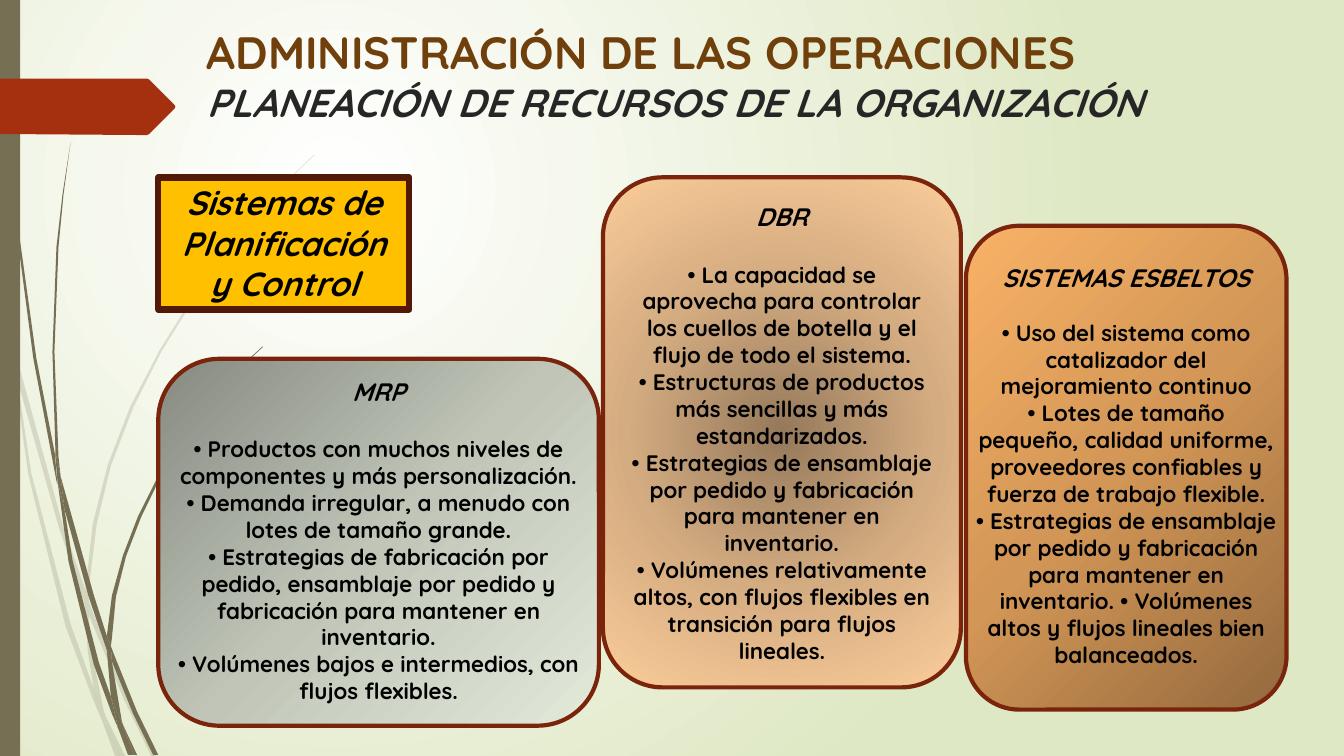
from dataclasses import dataclass
from typing import Optional

from lxml.etree import SubElement
from pptx import Presentation
from pptx.dml.color import RGBColor
from pptx.enum.shapes import MSO_SHAPE as Preset
from pptx.enum.text import MSO_ANCHOR as Anchor, MSO_AUTO_SIZE as AutoSize, PP_ALIGN as Align
from pptx.oxml.ns import qn
from pptx.util import Inches, Pt


@dataclass(frozen=True)
class Theme:
    font: str = "Quicksand"
    olive: str = "766F54"
    banner: str = "A53010"
    title: str = "6F3F0C"
    subtitle: str = "262626"
    text: str = "000000"
    topic_fill: str = "FFC000"
    topic_line: str = "521808"
    card_line: str = "7A240C"
    title_size: float = 32.4
    subtitle_size: float = 27.9
    topic_size: float = 24
    heading_size: float = 18
    body_size: float = 16


@dataclass(frozen=True)
class Box:
    left: float
    top: float
    width: float
    height: float

    def lengths(self) -> tuple:
        return tuple(Inches(v) for v in (self.left, self.top, self.width, self.height))


@dataclass(frozen=True)
class Gradient:
    stops: tuple
    angle: Optional[int] = None
    focus: tuple = (50, 50, 50, 50)


@dataclass(frozen=True)
class Card:
    box: Box
    gradient: Gradient
    heading: str
    bullets: tuple
    gap: float = 21
    text_box: Optional[Box] = None
    top_inset: float = 0.05


@dataclass(frozen=True)
class Grass:
    blades: tuple
    opacity: int


THEME = Theme()
BACKDROP = Gradient(((0, "FFFFFF"), (100, "DFE8C4")), focus=(50, 50, 100, 100))
BANNER = ((0, 0.78), (1.46, 0.78), (1.48, 0.79), (1.73, 1.04), (1.74, 1.06),
          (1.73, 1.08), (1.48, 1.33), (1.46, 1.34), (1.36, 1.34), (0, 1.33))

PALE_GRASS = Grass((
    ((0.11, 3.5), (0.09, 3.22), (0, 2.82), (0, 2.99), (0.1, 3.44)),
    ((0.58, 5.22), (0.84, 5.99), (0.85, 5.86), (0.62, 5.2), (0.14, 3.45), (0.17, 3.76)),
    ((0.92, 6.07), (0.88, 5.96), (0.88, 6.1), (1.23, 6.94), (1.5, 7.5), (1.55, 7.5), (1.27, 6.92)),
    ((1.19, 7.5), (1.24, 7.5), (1.05, 7.11)),
    ((0.93, 6.83), (0.7, 6.19), (0.31, 4.69), (0.17, 3.76), (0.11, 3.5), (0.28, 4.7),
     (0.65, 6.21), (0.92, 6.93), (1.01, 7.14), (0.99, 7.07)),
    ((0.84, 5.99), (0.87, 6.46), (0.93, 6.83), (0.96, 6.92), (1.05, 7.11), (1.03, 7.06),
     (0.91, 6.46), (0.88, 6.1), (0.88, 6.08)),
    ((0.88, 5.84), (0.96, 5.2), (1.1, 4.62), (1.32, 4.05), (1.6, 3.49), (1.93, 2.96),
     (2.29, 2.45), (2.68, 1.98), (2.9, 1.75), (3.12, 1.54), (3.12, 1.53), (2.89, 1.75),
     (2.68, 1.97), (2.28, 2.44), (1.91, 2.95), (1.58, 3.48), (1.29, 4.04), (1.07, 4.61),
     (0.92, 5.2), (0.85, 5.84), (0.85, 5.86), (0.88, 5.96)),
    ((1.01, 7.14), (1.14, 7.5), (1.19, 7.5)),
    ((0.88, 6.08), (0.88, 6.1), (0.88, 5.96), (0.85, 5.86), (0.84, 5.99)),
    ((0.96, 6.92), (0.93, 6.83), (0.99, 7.07), (1.01, 7.14), (1.19, 7.5), (1.05, 7.11)),
), 20)

DARK_GRASS = Grass((
    ((0.07, 1.1), (0.17, 2.33), (0.33, 3.55), (0.56, 4.77), (0.57, 4.81), (0.55, 4.57),
     (0.55, 4.53), (0.36, 3.55), (0.19, 2.32), (0.08, 1.09), (0.05, 0.48), (0.04, 0),
     (0.03, 0), (0.04, 0.48)),
    ((0.88, 5.92), (1.06, 6.45), (1.06, 6.31), (0.93, 5.9), (0.6, 4.72), (0.64, 5.05)),
    ((1.13, 6.49), (1.1, 6.41), (1.11, 6.56), (1.32, 7.08), (1.52, 7.49), (1.57, 7.49), (1.36, 7.06)),
    ((1.1, 6.91), (0.98, 6.57), (0.72, 5.56), (0.64, 5.05), (0.57, 4.77), (0.68, 5.57),
     (0.93, 6.59), (1.11, 7.08), (1.17, 7.22), (1.16, 7.17)),
    ((0.6, 4.72), (0.58, 4.53), (0.54, 3.49), (0.58, 2.45), (0.63, 1.93), (0.7, 1.41),
     (0.62, 1.93), (0.56, 2.45), (0.52, 3.49), (0.55, 4.49)),
    ((1.33, 7.49), (1.36, 7.49), (1.22, 7.19)),
    ((0.57, 4.77), (0.64, 5.05), (0.6, 4.72), (0.55, 4.49), (0.55, 4.53)),
    ((1.11, 6.33), (1.15, 5.92), (1.25, 5.52), (1.4, 5.13), (1.58, 4.76), (1.8, 4.4),
     (2.05, 4.06), (2.31, 3.74), (2.45, 3.59), (2.61, 3.44), (2.6, 3.44), (2.45, 3.58),
     (2.31, 3.73), (2.04, 4.05), (1.78, 4.39), (1.56, 4.74), (1.37, 5.12), (1.22, 5.51),
     (1.11, 5.91), (1.06, 6.31), (1.1, 6.41)),
    ((1.17, 7.22), (1.27, 7.49), (1.31, 7.49)),
    ((1.06, 6.45), (1.1, 6.91), (1.16, 7.06), (1.22, 7.19), (1.21, 7.16), (1.11, 6.56), (1.09, 6.51)),
    ((1.06, 6.45), (1.09, 6.51), (1.11, 6.56), (1.1, 6.41), (1.06, 6.31)),
    ((1.16, 7.06), (1.1, 6.91), (1.16, 7.17), (1.17, 7.22), (1.3, 7.49), (1.33, 7.49), (1.22, 7.19)),
), 100)

ASSEMBLY = "• Estrategias de ensamblaje por pedido y fabricación para mantener en inventario."
CARDS = (
    Card(Box(1.57, 3.56, 4.37, 3.64),
         Gradient(((0, "878A81"), (50, "C0C5B8"), (100, "E3EADA")), 45), "MRP",
         ("• Productos con muchos niveles de componentes y más personalización.",
          "• Demanda irregular, a menudo con lotes de tamaño grande.",
          "• Estrategias de fabricación por pedido, ensamblaje por pedido y fabricación "
          "para mantener en inventario.",
          "• Volúmenes bajos e intermedios, con flujos flexibles."),
         text_box=Box(1.57, 3.68, 4.37, 3.4)),
    Card(Box(5.98, 1.76, 3.55, 5.06),
         Gradient(((0, "95795B"), (50, "D4AC81"), (100, "FBCC99"))), "DBR",
         ("• La capacidad se aprovecha para controlar los cuellos de botella y el flujo "
          "de todo el sistema.",
          "• Estructuras de productos más sencillas y más estandarizados.",
          ASSEMBLY,
          "• Volúmenes relativamente altos, con flujos flexibles en transición para flujos lineales.")),
    Card(Box(9.58, 2.24, 3.18, 4.8),
         Gradient(((0, "94693D"), (50, "D29656"), (100, "F9B266")), 225), "SISTEMAS ESBELTOS",
         ("• Uso del sistema como catalizador del mejoramiento continuo",
          "• Lotes de tamaño pequeño, calidad uniforme, proveedores confiables y fuerza "
          "de trabajo flexible.",
          ASSEMBLY + " • Volúmenes altos y flujos lineales bien balanceados."),
         gap=19, text_box=Box(9.58, 2.3, 3.18, 4.7), top_inset=0.3),
)


def paint_gradient(fill, owner, gradient: Gradient) -> None:
    fill.gradient()
    node = next(owner.element.iter(qn("a:gradFill")))
    for child in list(node):
        node.remove(child)
    stops = SubElement(node, qn("a:gsLst"))
    for position, color in gradient.stops:
        stop = SubElement(stops, qn("a:gs"), pos=str(position * 1000))
        SubElement(stop, qn("a:srgbClr"), val=color)
    if gradient.angle is not None:
        SubElement(node, qn("a:lin"), ang=str(gradient.angle * 60000), scaled="0")
    else:
        circle = SubElement(node, qn("a:path"), path="circle")
        sides = {side: str(value * 1000) for side, value in zip("ltrb", gradient.focus)}
        SubElement(circle, qn("a:fillToRect"), **sides)


def paint_solid(shape, color: str, opacity: int = 100) -> None:
    shape.shadow.inherit = False
    shape.fill.solid()
    shape.fill.fore_color.rgb = RGBColor.from_string(color)
    shape.line.fill.background()
    if opacity < 100:
        node = next(shape.element.spPr.iter(qn("a:srgbClr")))
        SubElement(node, qn("a:alpha"), val=str(opacity * 1000))


def outline(shape, color: str, width: float) -> None:
    shape.shadow.inherit = False
    shape.line.color.rgb = RGBColor.from_string(color)
    shape.line.width = Pt(width)


def draw_outline(shapes, points: tuple, color: str, opacity: int = 100) -> None:
    corners = [(Inches(x), Inches(y)) for x, y in points]
    builder = shapes.build_freeform(*corners[0], scale=1.0)
    builder.add_line_segments(corners[1:], close=True)
    paint_solid(builder.convert_to_shape(), color, opacity)


def add_span(para, text: str, size: float, color: str = THEME.text, italic: bool = False) -> None:
    span = para.add_run()
    span.text = text
    span.font.name, span.font.size = THEME.font, Pt(size)
    span.font.bold, span.font.italic = True, italic
    span.font.color.rgb = RGBColor.from_string(color)


def prepare_frame(shape, anchor, align):
    frame = shape.text_frame
    frame.word_wrap, frame.auto_size = True, AutoSize.NONE
    frame.vertical_anchor = anchor
    frame.paragraphs[0].alignment = align
    return frame


def draw_title(slide) -> None:
    title = slide.shapes.title
    title.left, title.top, title.width, title.height = Box(1.95, 0.19, 9.75, 1.4).lengths()
    para = prepare_frame(title, Anchor.TOP, Align.LEFT).paragraphs[0]
    add_span(para, "ADMINISTRACIÓN DE LAS OPERACIONES", THEME.title_size, THEME.title)
    para.add_line_break()
    line_break = next(title.element.iter(qn("a:br")))
    SubElement(line_break, qn("a:rPr"), sz=str(round(THEME.title_size * 100)))
    add_span(para, "PLANEACIÓN DE RECURSOS DE LA ORGANIZACIÓN", THEME.subtitle_size, THEME.subtitle, True)


def draw_topic(slide) -> None:
    topic = slide.shapes.add_shape(Preset.RECTANGLE, *Box(1.57, 1.76, 2.49, 1.31).lengths())
    paint_solid(topic, THEME.topic_fill)
    outline(topic, THEME.topic_line, 4.5)
    para = prepare_frame(topic, Anchor.TOP, Align.CENTER).paragraphs[0]
    add_span(para, "Sistemas de Planificación y Control", THEME.topic_size, italic=True)


def draw_card(slide, card: Card) -> None:
    panel = slide.shapes.add_shape(Preset.ROUNDED_RECTANGLE, *card.box.lengths())
    paint_gradient(panel.fill, panel, card.gradient)
    outline(panel, THEME.card_line, 3)
    holder = slide.shapes.add_textbox(*card.text_box.lengths()) if card.text_box else panel
    frame = prepare_frame(holder, Anchor.TOP if card.text_box else Anchor.MIDDLE, Align.CENTER)
    frame.margin_top = Inches(card.top_inset)
    add_span(frame.paragraphs[0], card.heading, THEME.heading_size, italic=True)
    for index, bullet in enumerate(card.bullets):
        para = frame.add_paragraph()
        para.alignment = Align.CENTER
        para.space_before = Pt(0 if index else card.gap)
        add_span(para, bullet, THEME.body_size)


def main() -> None:
    deck = Presentation()
    deck.slide_width, deck.slide_height = Inches(13.33), Inches(7.5)
    page = deck.slides.add_slide(deck.slide_layouts[5])
    paint_gradient(page.background.fill, page, BACKDROP)
    for grass in (PALE_GRASS, DARK_GRASS):
        clump = page.shapes.add_group_shape()
        for blade in grass.blades:
            draw_outline(clump.shapes, blade, THEME.olive, grass.opacity)
    stripe = page.shapes.add_shape(Preset.RECTANGLE, *Box(0, 0, 0.2, 7.5).lengths())
    paint_solid(stripe, THEME.olive)
    draw_outline(page.shapes, BANNER, THEME.banner)
    draw_title(page)
    draw_topic(page)
    for card in CARDS:
        draw_card(page, card)
    deck.save("out.pptx")


if __name__ == "__main__":
    main()
